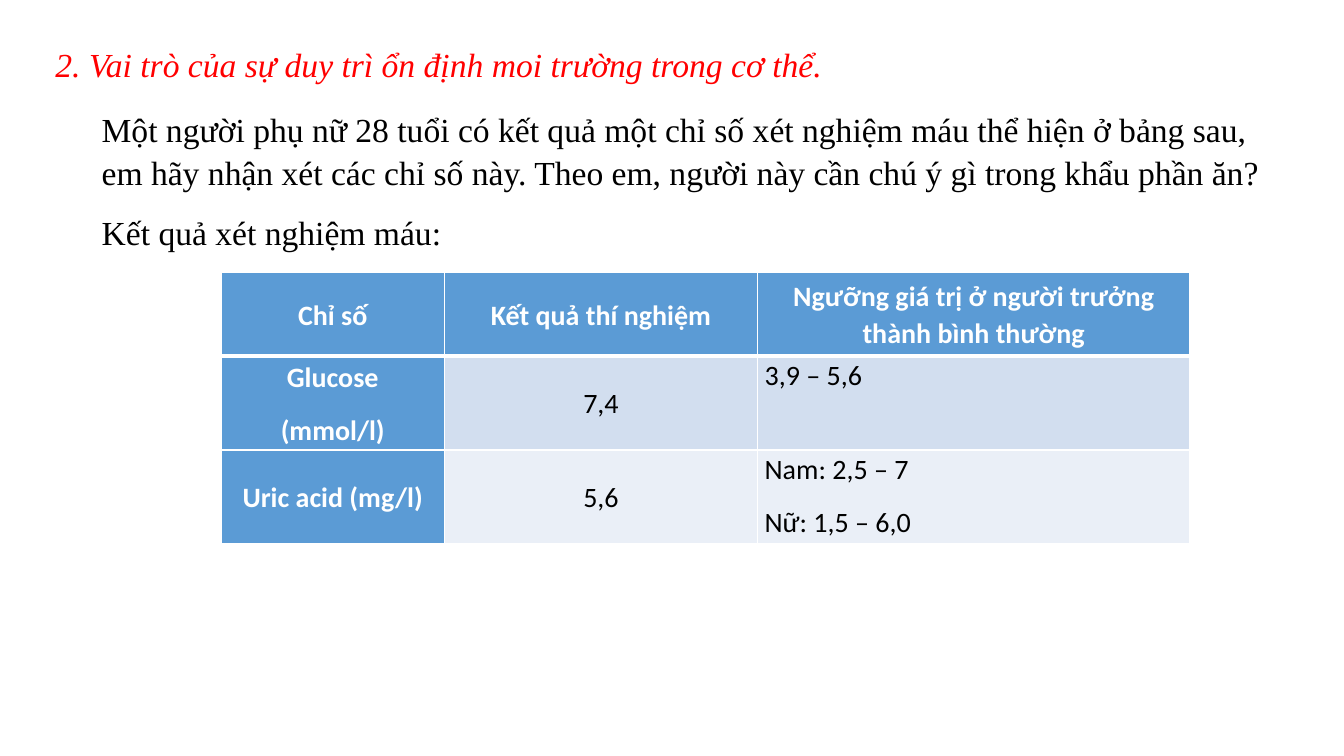
from lxml import etree
from pptx import Presentation
from pptx import util as u
from pptx.dml.color import RGBColor
from pptx.enum import text
from pptx.oxml.ns import qn

COLORS = {"heading": "FF0000", "body": "000000", "header": "5B9BD5",
          "band": "D2DEEF", "light": "EAEFF7", "white": "FFFFFF"}
SPACING = {"line_spacing": 1.07, "space_before": u.Pt(6), "space_after": u.Pt(6)}
SERIF = {"name": "Times New Roman", "size": u.Pt(24)}
SANS = {"name": "Calibri", "size": u.Pt(20)}
CELL_MARGINS = {"margin_left": u.Pt(5), "margin_right": u.Pt(5),
                "margin_top": 0, "margin_bottom": 0}

HEADING = "2. Vai trò của sự duy trì ổn định moi trường trong cơ thể."
QUESTION = [
    "Một người phụ nữ 28 tuổi có kết quả một chỉ số xét nghiệm máu thể hiện ở bảng sau, "
    "em hãy nhận xét các chỉ số này. Theo em, người này cần chú ý gì trong khẩu phần ăn?",
    "Kết quả xét nghiệm máu:",
]
RESULTS = [
    [["Chỉ số"], ["Kết quả thí nghiệm"],
     ["Ngưỡng giá trị ở người trưởng thành bình thường"]],
    [["Glucose", "(mmol/l)"], ["7,4"], ["3,9 – 5,6"]],
    [["Uric acid (mg/l)"], ["5,6"], ["Nam: 2,5 – 7", "Nữ: 1,5 – 6,0"]],
]
COLUMN_WIDTHS = [159.4, 223.8, 308.8]
ROW_HEIGHTS = [60, 67, 67]


def apply(target, values):
    for name, value in values.items():
        setattr(target, name, value)


def write(frame, lines, font, color, align=text.PP_ALIGN.LEFT, indent=0):
    for index, line in enumerate(lines):
        paragraph = frame.add_paragraph() if index else frame.paragraphs[0]
        apply(paragraph, {**SPACING, "alignment": align})
        if indent:
            properties = paragraph._p.get_or_add_pPr()
            properties.set("marL", str(u.Pt(indent)))
            properties.set("indent", "0")
        run = paragraph.add_run()
        run.text = line
        apply(run.font, font)
        run.font.color.rgb = RGBColor.from_string(COLORS[color])


def place(box, left, top, width, height):
    apply(box, {"left": u.Pt(left), "top": u.Pt(top),
                "width": u.Pt(width), "height": u.Pt(height)})


def add_heading(slide):
    heading = slide.shapes.title
    place(heading, 32.4, 26, 567.4, 36.7)
    apply(heading.text_frame, {"word_wrap": False, "auto_size": text.MSO_AUTO_SIZE.NONE,
                               "vertical_anchor": text.MSO_ANCHOR.TOP})
    write(heading.text_frame, [HEADING], {**SERIF, "italic": True}, "heading")


def add_question(slide):
    question = slide.shapes.add_textbox(u.Pt(58.3), u.Pt(72), u.Pt(857.5), u.Pt(113))
    question.text_frame.word_wrap = True
    write(question.text_frame, QUESTION, SERIF, "body", indent=7.2)


def add_borders(cell, widths):
    properties = cell._tc.get_or_add_tcPr()
    for index, (side, width) in enumerate(widths.items()):
        border = etree.Element(qn(f"a:ln{side}"), w=str(u.Pt(width)))
        fill = etree.SubElement(border, qn("a:solidFill"))
        etree.SubElement(fill, qn("a:srgbClr"), val=COLORS["white"])
        properties.insert(index, border)


def fill_cell(cell, lines, row, column):
    is_label = row == 0 or column == 0
    is_range = row > 0 and column == 2
    background = "header" if is_label else ("light", "band")[row % 2]
    apply(cell, {**CELL_MARGINS, "vertical_anchor":
                 text.MSO_ANCHOR.TOP if is_range else text.MSO_ANCHOR.MIDDLE})
    cell.fill.solid()
    cell.fill.fore_color.rgb = RGBColor.from_string(COLORS[background])
    add_borders(cell, {"L": 1, "R": 1, "T": 3 if row == 1 else 1, "B": 3 if row == 0 else 1})
    write(cell.text_frame, lines, {**SANS, "bold": is_label},
          "white" if is_label else "body",
          text.PP_ALIGN.LEFT if is_range else text.PP_ALIGN.CENTER)


def add_results(slide):
    results = slide.shapes.add_table(
        len(ROW_HEIGHTS), len(COLUMN_WIDTHS), u.Pt(158), u.Pt(194.5),
        u.Pt(sum(COLUMN_WIDTHS)), u.Pt(sum(ROW_HEIGHTS))).table
    for column, width in zip(results.columns, COLUMN_WIDTHS):
        column.width = u.Pt(width)
    for row, height in zip(results.rows, ROW_HEIGHTS):
        row.height = u.Pt(height)
    for row, entries in enumerate(RESULTS):
        for column, lines in enumerate(entries):
            fill_cell(results.cell(row, column), lines, row, column)


def main():
    deck = Presentation()
    apply(deck, {"slide_width": u.Pt(960), "slide_height": u.Pt(540)})
    slide = deck.slides.add_slide(deck.slide_layouts[5])
    add_heading(slide)
    add_results(slide)
    add_question(slide)
    deck.save("out.pptx")


if __name__ == "__main__":
    main()
